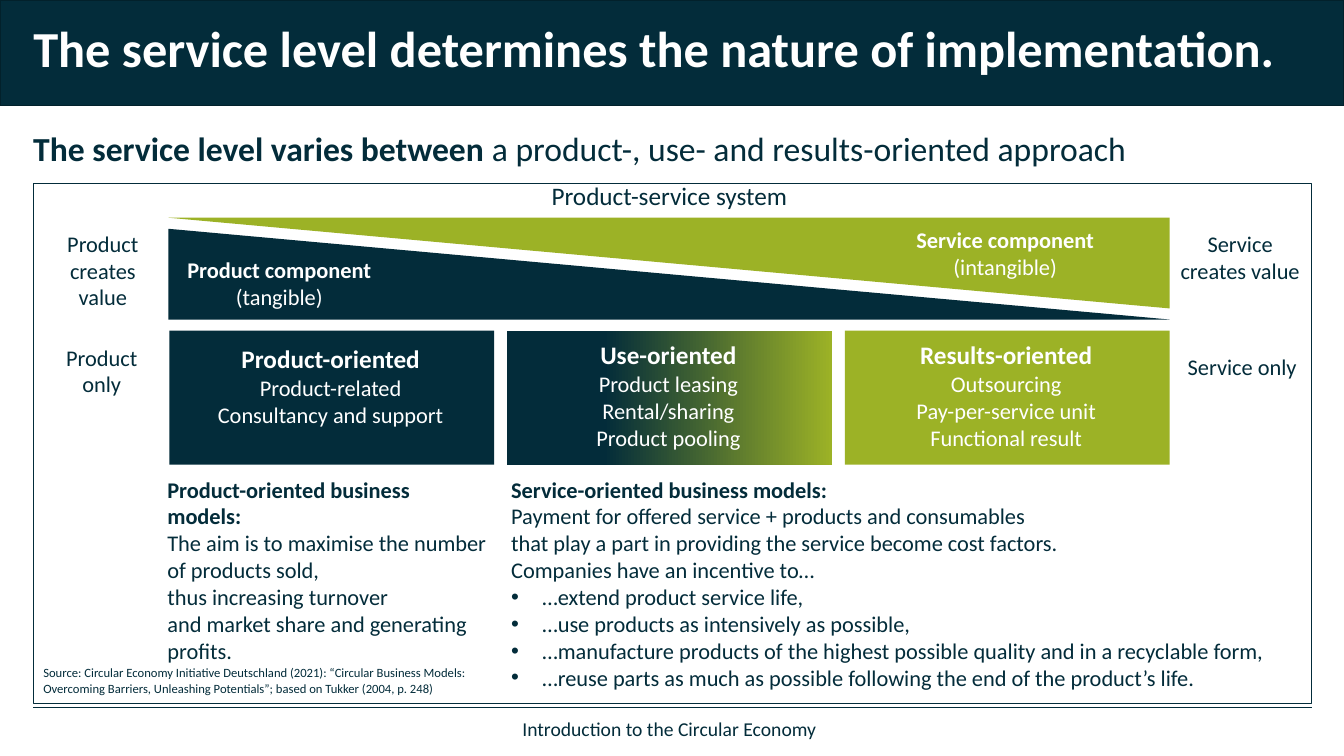
from dataclasses import dataclass
from typing import Any, NamedTuple

import pptx
import pptx.dml.color
import pptx.enum.shapes
import pptx.enum.text
import pptx.oxml.ns
import pptx.util
from lxml import etree

Inches = pptx.util.Inches
Kind = pptx.enum.shapes.MSO_SHAPE
Align = pptx.enum.text.PP_ALIGN
Anchor = pptx.enum.text.MSO_ANCHOR
qn = pptx.oxml.ns.qn


@dataclass(frozen=True)
class Theme:
    font: str = "Calibri"
    navy: str = "032C3A"
    edge: str = "02212B"
    green: str = "9CB226"
    white: str = "FFFFFF"
    title: int = 36
    lead: int = 24
    head: int = 18
    text: int = 16
    foot: int = 14
    source: int = 9


THEME = Theme()


class Span(NamedTuple):
    text: str
    size: int = THEME.text
    bold: bool = False


class Para(NamedTuple):
    spans: list[Span]
    bullet: bool = False


class Block(NamedTuple):
    """A piece of text with its place: left, top, width, height."""
    at: tuple[float, float, float, float]
    paras: list[Para]
    color: str = THEME.navy
    align: Any = Align.CENTER
    anchor: Any = Anchor.TOP
    spacing: float = 1.0


class Form(NamedTuple):
    """A preset shape with its place, fill and outline."""
    at: tuple[float, float, float, float]
    fill: str | None
    kind: Any = Kind.RECTANGLE
    line: str | None = None
    turn: int = 0
    blend: str | None = None


class Card(NamedTuple):
    name: str
    lines: list[str]
    fill: str
    top: float
    blend: str | None = None


def rgb(code: str) -> Any:
    return pptx.dml.color.RGBColor.from_string(code)


def apply(target: Any, values: dict[str, Any]) -> None:
    for name, value in values.items():
        setattr(target, name, value)


def place(shape: Any, at: tuple[float, float, float, float]) -> None:
    apply(shape, dict(zip(("left", "top", "width", "height"), map(Inches, at))))


def plain(*texts: str, size: int = THEME.text, bold: bool = False) -> list[Para]:
    return [Para([Span(text, size, bold)]) for text in texts]


def bullets(*texts: str) -> list[Para]:
    return [Para([Span(text)], True) for text in texts]


def write(shape: Any, block: Block) -> None:
    frame = shape.text_frame
    apply(frame, {"word_wrap": True, "vertical_anchor": block.anchor,
                  "auto_size": pptx.enum.text.MSO_AUTO_SIZE.NONE,
                  "margin_left": 0, "margin_right": 0,
                  "margin_top": 0, "margin_bottom": 0})
    for i, para in enumerate(block.paras):
        item = frame.add_paragraph() if i else frame.paragraphs[0]
        if para.bullet:
            props = item._p.get_or_add_pPr()
            props.set("marL", str(Inches(0.31)))
            props.set("indent", str(Inches(-0.31)))
            etree.SubElement(props, qn("a:buFont")).set("typeface", "Arial")
            etree.SubElement(props, qn("a:buChar")).set("char", "•")
        apply(item, {"alignment": block.align, "line_spacing": block.spacing})
        for span in para.spans:
            for j, piece in enumerate(span.text.split("\n")):
                if j:
                    item.add_line_break()
                run = item.add_run()
                run.text = piece
                apply(run.font, {"name": THEME.font, "bold": span.bold,
                                 "size": pptx.util.Pt(span.size)})
                run.font.color.rgb = rgb(block.color)


def label(slide: Any, block: Block) -> None:
    write(slide.shapes.add_textbox(*map(Inches, block.at)), block)


def draw(slide: Any, form: Form) -> None:
    shape = slide.shapes.add_shape(form.kind, *map(Inches, form.at))
    apply(shape, {"rotation": form.turn})
    shape.shadow.inherit = False
    if form.blend:
        shape.fill.gradient()
        shape.fill.gradient_angle = 0
        ends = ((0.3, form.fill), (1.0, form.blend))
        for stop, (spot, color) in zip(shape.fill.gradient_stops, ends):
            stop.position = spot
            stop.color.rgb = rgb(color)
    elif form.fill:
        shape.fill.solid()
        shape.fill.fore_color.rgb = rgb(form.fill)
    else:
        shape.fill.background()
    if form.line:
        shape.line.color.rgb = rgb(form.line)
        shape.line.width = pptx.util.Pt(1)
    else:
        shape.line.fill.background()


def rule(slide: Any, left: float, right: float, y: float) -> None:
    line = slide.shapes.add_connector(pptx.enum.shapes.MSO_CONNECTOR.STRAIGHT,
                                      *map(Inches, (left, y, right, y)))
    line.line.color.rgb = rgb(THEME.navy)
    line.line.width = pptx.util.Pt(0.5)
    etree.SubElement(line._element.spPr, qn("a:effectLst"))


FORMS = [
    Form((0, 0, 13.33, 1.05), THEME.navy, line=THEME.edge),
    Form((0.33, 1.82, 12.68, 5.16), None, line=THEME.navy),
    Form((1.67, 2.27, 9.93, 0.9), THEME.navy, Kind.RIGHT_TRIANGLE),
    Form((1.67, 2.16, 9.93, 0.9), THEME.green, Kind.RIGHT_TRIANGLE, turn=180),
]

CARDS = [
    Card("Product-oriented", ["Product-related", "Consultancy and support"],
         THEME.navy, 3.41),
    Card("Use-oriented", ["Product leasing", "Rental/sharing", "Product pooling"],
         THEME.navy, 3.37, THEME.green),
    Card("Results-oriented", ["Outsourcing", "Pay-per-service unit", "Functional result"],
         THEME.green, 3.37),
]

TITLE = Block((0.33, 0.24, 12.68, 0.72),
              plain("The service level determines the nature of implementation.",
                    size=THEME.title, bold=True),
              THEME.white, Align.LEFT, spacing=0.9)

BLOCKS = [
    Block((0.33, 1.31, 11.04, 0.4),
          [Para([Span("The service level varies between ", THEME.lead, True),
                 Span("a product-, use- and results-oriented approach", THEME.lead)])],
          align=Align.LEFT, spacing=0.9),
    Block((1.67, 1.79, 9.94, 0.3), plain("Product-service system", size=THEME.head)),
    # Ends of the scale
    Block((0.48, 2.28, 1.08, 0.8), plain("Product\ncreates\nvalue")),
    Block((11.61, 2.28, 1.38, 0.54), plain("Service\ncreates value")),
    Block((0.56, 3.41, 0.9, 0.53), plain("Product\nonly")),
    Block((11.66, 3.5, 1.32, 0.27), plain("Service only")),
    # Wedge labels
    Block((1.78, 2.54, 1.98, 0.53),
          [Para([Span("Product component\n", bold=True), Span("(tangible)")])], THEME.white),
    Block((8.78, 2.24, 2.38, 0.53),
          [Para([Span("Service component\n", bold=True), Span("(intangible)")])], THEME.white),
    # Business models
    Block((1.66, 4.72, 3.19, 1.86),
          plain("Product-oriented business models:", bold=True)
          + plain("The aim is to maximise the number of products sold,\n"
                  "thus increasing turnover\nand market share and generating profits."),
          align=Align.LEFT),
    Block((5.07, 4.72, 7.57, 2.1),
          plain("Service-oriented business models:", bold=True)
          + plain("Payment for offered service + products and consumables\n"
                  "that play a part in providing the service become cost factors.",
                  "Companies have an incentive to…")
          + bullets("…extend product service life,",
                    "…use products as intensively as possible,",
                    "…manufacture products of the highest possible quality "
                    "and in a recyclable form,",
                    "…reuse parts as much as possible following the end of "
                    "the product’s life."),
          align=Align.LEFT),
    # Source and footer
    Block((0.43, 6.6, 4.47, 0.3),
          plain("Source: Circular Economy Initiative Deutschland (2021): “Circular Business "
                "Models: Overcoming Barriers, Unleashing Potentials”; based on Tukker "
                "(2004, p. 248)", size=THEME.source), align=Align.LEFT),
    Block((4.39, 7.03, 4.5, 0.4),
          plain("Introduction to the Circular Economy", size=THEME.foot),
          anchor=Anchor.MIDDLE),
]


def main() -> None:
    deck = pptx.Presentation()
    apply(deck, {"slide_width": Inches(13.33), "slide_height": Inches(7.5)})
    slide = deck.slides.add_slide(deck.slide_layouts[5])

    # Shapes
    for form in FORMS:
        draw(slide, form)
    rule(slide, 0.33, 13.01, 7.02)

    # Cards in an even row
    for i, card in enumerate(CARDS):
        left = 1.68 + i * 3.35
        draw(slide, Form((left, 3.28, 3.22, 1.33), card.fill, blend=card.blend))
        paras = plain(card.name, size=THEME.head, bold=True) + plain(*card.lines)
        label(slide, Block((left - 0.02, card.top, 3.24, 1.08), paras, THEME.white))

    # Title, lifted above its band
    title = slide.shapes.title
    place(title, TITLE.at)
    write(title, TITLE)
    title.element.getparent().append(title.element)

    # Text
    for block in BLOCKS:
        label(slide, block)
    deck.save("out.pptx")


if __name__ == "__main__":
    main()
